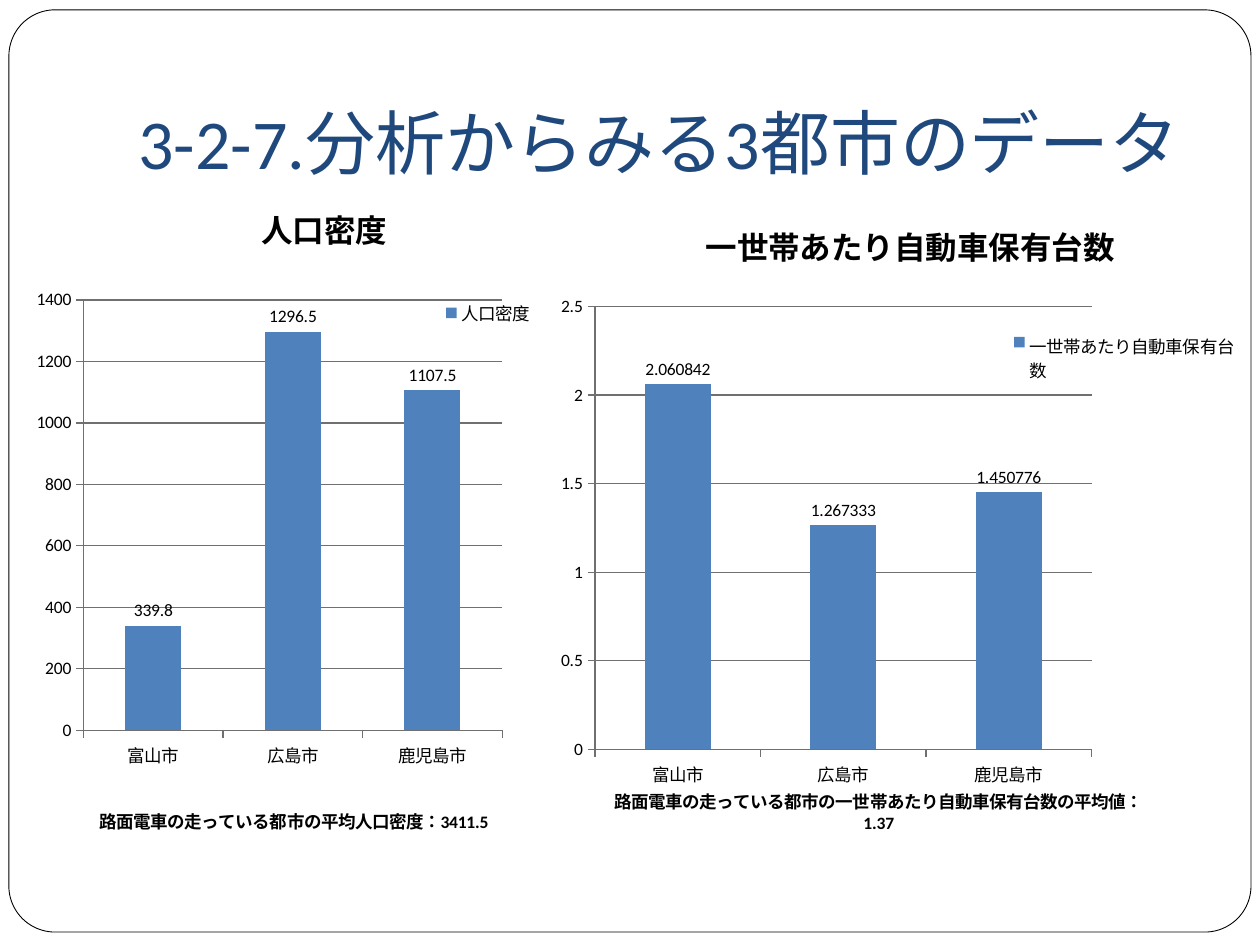
from dataclasses import dataclass

from lxml import etree
from pptx import Presentation
from pptx.chart.data import CategoryChartData
from pptx.dml.color import RGBColor
from pptx.enum.chart import XL_CHART_TYPE, XL_LABEL_POSITION, XL_LEGEND_POSITION, XL_TICK_MARK
from pptx.enum.lang import MSO_LANGUAGE_ID
from pptx.enum.shapes import MSO_SHAPE
from pptx.enum.text import MSO_ANCHOR, MSO_AUTO_SIZE, PP_ALIGN
from pptx.oxml.ns import qn
from pptx.util import Cm, Pt

COLUMNS = XL_CHART_TYPE.COLUMN_CLUSTERED
OUTSIDE_END = XL_LABEL_POSITION.OUTSIDE_END
LEGEND_RIGHT = XL_LEGEND_POSITION.RIGHT
TICK_OUT = XL_TICK_MARK.OUTSIDE
TICK_NONE = XL_TICK_MARK.NONE
JAPANESE = MSO_LANGUAGE_ID.JAPANESE
ROUNDED = MSO_SHAPE.ROUNDED_RECTANGLE
BOTTOM = MSO_ANCHOR.BOTTOM
NO_AUTOFIT = MSO_AUTO_SIZE.NONE
LEFT = PP_ALIGN.LEFT
CITIES = ("富山市", "広島市", "鹿児島市")


@dataclass(frozen=True)
class Theme:
    """Colours, typeface and type sizes of the slide."""
    font: str = "Calibri"
    paper: RGBColor = RGBColor(0xFF, 0xFF, 0xFF)
    ink: RGBColor = RGBColor(0, 0, 0)
    heading: RGBColor = RGBColor(0x1F, 0x49, 0x7D)
    column: RGBColor = RGBColor(0x4F, 0x81, 0xBD)
    grid: RGBColor = RGBColor(0x70, 0x70, 0x70)
    heading_size: int = 40
    chart_title_size: int = 18
    label_size: int = 10


THEME = Theme()


def add_run(paragraph, text, size, color, bold=False):
    """Add one formatted Japanese run to a paragraph."""
    run = paragraph.add_run()
    run.text = text
    run.font.language_id = JAPANESE
    run.font.name = THEME.font
    run.font.size = Pt(size)
    run.font.bold = bold
    run.font.color.rgb = color


def add_frame(slide):
    """Draw the rounded page frame behind everything else."""
    frame = slide.shapes.add_shape(ROUNDED, Cm(0.18), Cm(0.2), Cm(25.04), Cm(18.59))
    frame.adjustments[0] = 0.05
    frame.shadow.inherit = False
    frame.fill.solid()
    frame.fill.fore_color.rgb = THEME.paper
    frame.line.color.rgb = THEME.ink
    frame.line.width = Pt(0.5)
    slide.shapes._spTree.insert(2, frame._element)


def set_heading(slide, text):
    """Place and fill the title placeholder."""
    heading = slide.shapes.title
    heading.left, heading.top = Cm(2.54), Cm(0.76)
    heading.width, heading.height = Cm(21.59), Cm(3.18)
    body = heading.text_frame
    body.word_wrap = True
    body.auto_size = NO_AUTOFIT
    body.vertical_anchor = BOTTOM
    body.margin_left = body.margin_right = body.margin_bottom = Cm(0.25)
    body.margin_top = Cm(0.13)
    body.paragraphs[0].alignment = LEFT
    add_run(body.paragraphs[0], text, THEME.heading_size, THEME.heading)


def set_layout(part, index, percents, inner=False):
    """Give a chart part a manual layout in percent of the chart."""
    for old in part.findall(qn("c:layout")):
        part.remove(old)
    layout = etree.Element(qn("c:layout"))
    manual = etree.SubElement(layout, qn("c:manualLayout"))
    settings = [("layoutTarget", "inner")] if inner else []
    settings += [("xMode", "edge"), ("yMode", "edge")]
    settings += [(tag, f"{percent / 100:.3f}") for tag, percent in zip("xywh", percents)]
    for tag, value in settings:
        etree.SubElement(manual, qn(f"c:{tag}")).set("val", value)
    part.insert(index, layout)


def set_chart_text(holder, text, size, place):
    """Write a bold chart or axis title at its place."""
    add_run(holder.text_frame.paragraphs[0], text, size, THEME.ink, bold=True)
    set_layout(holder._element, 1, place)


def style_axes(chart, scale):
    """Format both axes and the horizontal gridlines."""
    category, value = chart.category_axis, chart.value_axis
    value.has_major_gridlines = True
    value.minimum_scale = 0
    value.maximum_scale, value.major_unit = scale
    for line in (category.format.line, value.format.line, value.major_gridlines.format.line):
        line.color.rgb = THEME.grid
        line.width = Pt(0.75)
    for axis in (category, value):
        axis.major_tick_mark = TICK_OUT
        axis.minor_tick_mark = TICK_NONE


def style_columns(plot):
    """Format the columns and their value labels."""
    plot.gap_width = 150
    plot.vary_by_categories = False
    columns = plot.series[0].format.fill
    columns.solid()
    columns.fore_color.rgb = THEME.column
    plot.has_data_labels = True
    labels = plot.data_labels
    labels.show_value = True
    labels.position = OUTSIDE_END
    labels.number_format = "General"
    labels.number_format_is_linked = False


def add_city_chart(slide, box, name, values, scale, caption,
                   plot_area, legend_area, title_place, caption_place):
    """Add a column chart comparing the cities."""
    data = CategoryChartData()
    data.categories = CITIES
    data.add_series(name, values)
    chart = slide.shapes.add_chart(COLUMNS, *map(Cm, box), data).chart
    chart.font.name = THEME.font
    chart.font.size = Pt(THEME.label_size)
    chart.font.color.rgb = THEME.ink
    chart.has_title = True
    set_chart_text(chart.chart_title, name, THEME.chart_title_size, title_place)
    set_chart_text(chart.category_axis.axis_title, caption, THEME.label_size, caption_place)
    style_axes(chart, scale)
    style_columns(chart.plots[0])
    chart.has_legend = True
    chart.legend.position = LEGEND_RIGHT
    chart.legend.include_in_layout = False
    set_layout(chart.legend._element, 1, legend_area)
    set_layout(chart._chartSpace.chart.plotArea, 0, plot_area, inner=True)


def main():
    """Build the slide and save it."""
    deck = Presentation()
    deck.slide_width, deck.slide_height = Cm(25.4), Cm(19.05)
    slide = deck.slides.add_slide(deck.slide_layouts[5])
    add_frame(slide)
    set_heading(slide, "3-2-7.分析からみる3都市のデータ")
    add_city_chart(
        slide, (0.51, 3.89, 11.99, 13.03), "人口密度", (339.8, 1296.5, 1107.5), (1400, 200),
        "路面電車の走っている都市の平均人口密度：3411.5",
        plot_area=(9.8, 16.6, 70.4, 66.7), legend_area=(69.8, 16.6, 16, 4),
        title_place=(38.7, 0.5), caption_place=(11.9, 94.7))
    add_city_chart(
        slide, (11.1, 4.11, 14, 12.8), "一世帯あたり自動車保有台数",
        (2.060842, 1.267333, 1.450776), (2.5, 0.5),
        "路面電車の走っている都市の一世帯あたり自動車保有台数の平均値：1.37",
        plot_area=(6.4, 16.3, 71.5, 70.2), legend_area=(66.1, 20, 33, 9),
        title_place=(21.5, 1.6), caption_place=(8.7, 92))
    deck.save("out.pptx")


if __name__ == "__main__":
    main()
